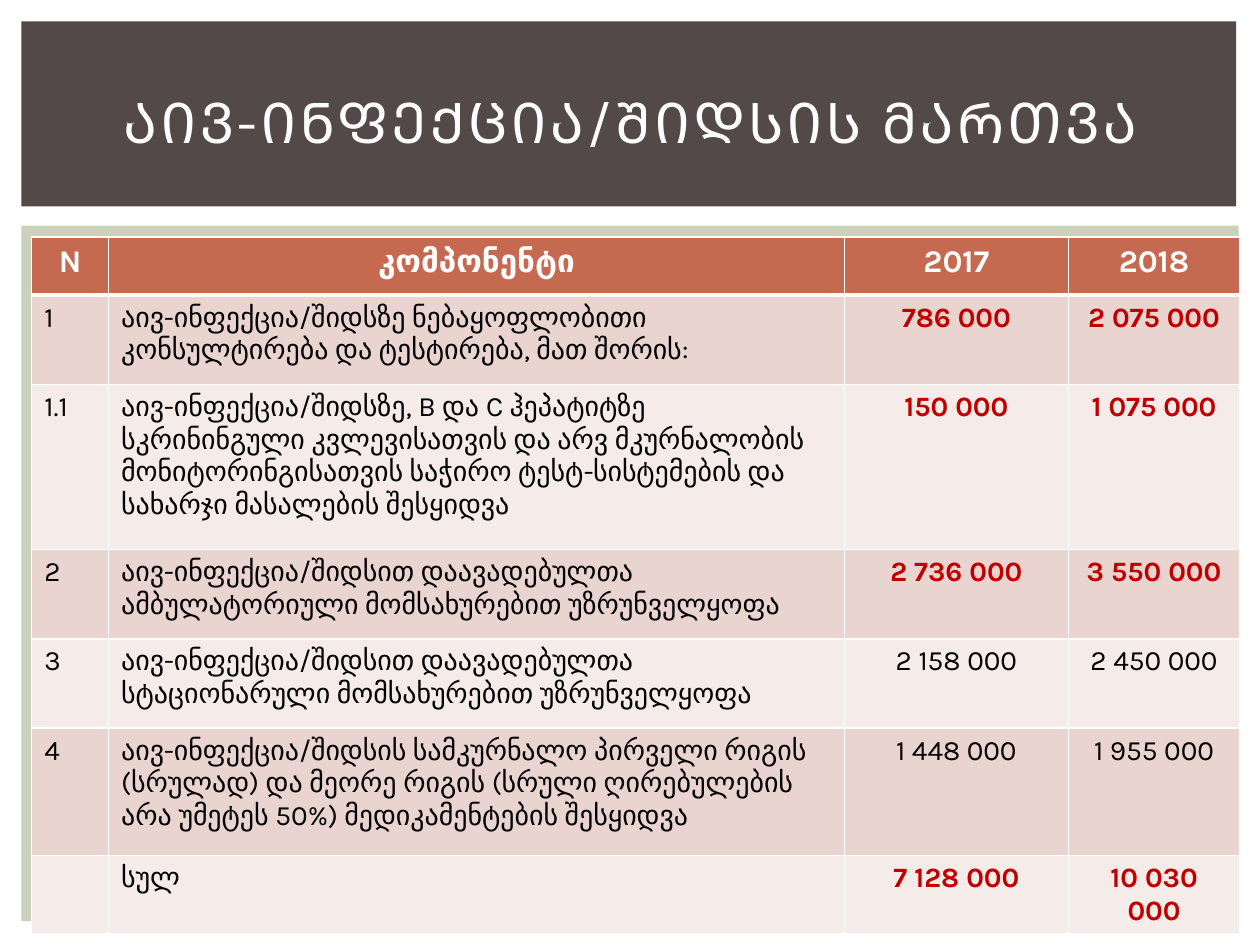
from lxml.etree import SubElement
from pptx import Presentation
from pptx.dml.color import RGBColor
from pptx.enum.shapes import MSO_SHAPE
from pptx.enum.text import MSO_ANCHOR, PP_ALIGN
from pptx.oxml import parse_xml
from pptx.oxml.ns import nsdecls, qn
from pptx.util import Cm, Pt

TITLE = "ᲐᲘᲕ-ᲘᲜᲤᲔᲥᲪᲘᲐ/ᲨᲘᲓᲡᲘᲡ ᲛᲐᲠᲗᲕᲐ"
HEADINGS = ("N", "კომპონენტი", "2017", "2018")
BUDGET = [
    ("1", "აივ-ინფექცია/შიდსზე ნებაყოფლობითი კონსულტირება და ტესტირება, მათ შორის:",
     "786 000", "2 075 000"),
    ("1.1", "აივ-ინფექცია/შიდსზე, B და C ჰეპატიტზე სკრინინგული კვლევისათვის და არვ "
     "მკურნალობის მონიტორინგისათვის საჭირო ტესტ-სისტემების და სახარჯი მასალების შესყიდვა",
     "150 000", "1 075 000"),
    ("2", "აივ-ინფექცია/შიდსით დაავადებულთა ამბულატორიული მომსახურებით უზრუნველყოფა",
     "2 736 000", "3 550 000"),
    ("3", "აივ-ინფექცია/შიდსით დაავადებულთა სტაციონარული მომსახურებით უზრუნველყოფა",
     "2 158 000", "2 450 000"),
    ("4", "აივ-ინფექცია/შიდსის სამკურნალო პირველი რიგის (სრულად) და მეორე რიგის "
     "(სრული ღირებულების არა უმეტეს 50%) მედიკამენტების შესყიდვა",
     "1 448 000", "1 955 000"),
    ("", "სულ", "7 128 000", "10 030 000"),
]
HIGHLIGHTED = {"1", "1.1", "2", ""}
COLUMN_WIDTHS = (1.55, 14.83, 4.52, 3.45)
ROW_HEIGHTS = (1.17, 1.8, 3.33, 1.8, 1.8, 2.57, 1.17)
BANDS = ("EAD4D0", "F5EBE9")
FONT = "Karla"


def color(code):
    """Turn a hex string into a colour."""
    return RGBColor.from_string(code)


def add_block(slide, bounds, fill):
    """Add a plain filled rectangle."""
    block = slide.shapes.add_shape(MSO_SHAPE.RECTANGLE, *map(Cm, bounds))
    block.shadow.inherit = False
    block.fill.solid()
    block.fill.fore_color.rgb = color(fill)
    block.line.fill.background()


def style_text(paragraph, size, code, bold=False, centered=False):
    """Format a paragraph and its runs."""
    paragraph.alignment = PP_ALIGN.CENTER if centered else PP_ALIGN.LEFT
    for font in [paragraph.font] + [run.font for run in paragraph.runs]:
        font.name = FONT
        font.size = Pt(size)
        font.bold = bold
        font.color.rgb = color(code)


def add_borders(cell, top, bottom):
    """Draw white borders around a cell, with widths in points."""
    properties = cell._tc.get_or_add_tcPr()
    widths = {"lnL": 1, "lnR": 1, "lnT": top, "lnB": bottom}
    for position, (side, width) in enumerate(widths.items()):
        border = parse_xml(f'<a:{side} {nsdecls("a")} w="{Pt(width)}"/>')
        fill = SubElement(border, qn("a:solidFill"))
        SubElement(fill, qn("a:srgbClr"), val="FFFFFF")
        properties.insert(position, border)


def add_title(slide):
    """Add the letter-spaced title over the banner."""
    title = slide.shapes.add_textbox(Cm(1.07), Cm(0.99), Cm(23.29), Cm(2.92))
    frame = title.text_frame
    frame.word_wrap = True
    frame.vertical_anchor = MSO_ANCHOR.MIDDLE
    frame.text = TITLE
    style_text(frame.paragraphs[0], 32, "FFFFFF", centered=True)
    frame.paragraphs[0].runs[0].font._element.set("spc", "200")


def add_budget(slide):
    """Add the budget table."""
    rows = [HEADINGS] + BUDGET
    budget = slide.shapes.add_table(
        len(rows), len(HEADINGS), Cm(0.64), Cm(4.78),
        Cm(sum(COLUMN_WIDTHS)), Cm(sum(ROW_HEIGHTS))).table
    for column, width in zip(budget.columns, COLUMN_WIDTHS):
        column.width = Cm(width)
    for r, (entries, height) in enumerate(zip(rows, ROW_HEIGHTS)):
        budget.rows[r].height = Cm(height)
        heading = r == 0
        for c, entry in enumerate(entries):
            cell = budget.cell(r, c)
            cell.text_frame.text = entry
            cell.fill.solid()
            cell.fill.fore_color.rgb = color("C66951" if heading else BANDS[(r - 1) % 2])
            add_borders(cell, 3 if r == 1 else 1, 3 if heading else 1)
            amount = c >= 2
            strong = amount and entries[0] in HIGHLIGHTED
            ink = "FFFFFF" if heading else "C00000" if strong else "000000"
            style_text(cell.text_frame.paragraphs[0], 18 if heading else 16, ink,
                       heading or strong, heading or amount)


def main():
    """Build and save the slide."""
    deck = Presentation()
    deck.slide_width, deck.slide_height = Cm(25.4), Cm(19.05)
    slide = deck.slides.add_slide(deck.slide_layouts[6])
    add_block(slide, (0.43, 4.55, 24.54, 14.02), "CCD1B9")
    add_block(slide, (0.43, 0.43, 24.49, 3.73), "534949")
    add_budget(slide)
    add_title(slide)
    deck.save("out.pptx")


if __name__ == "__main__":
    main()
